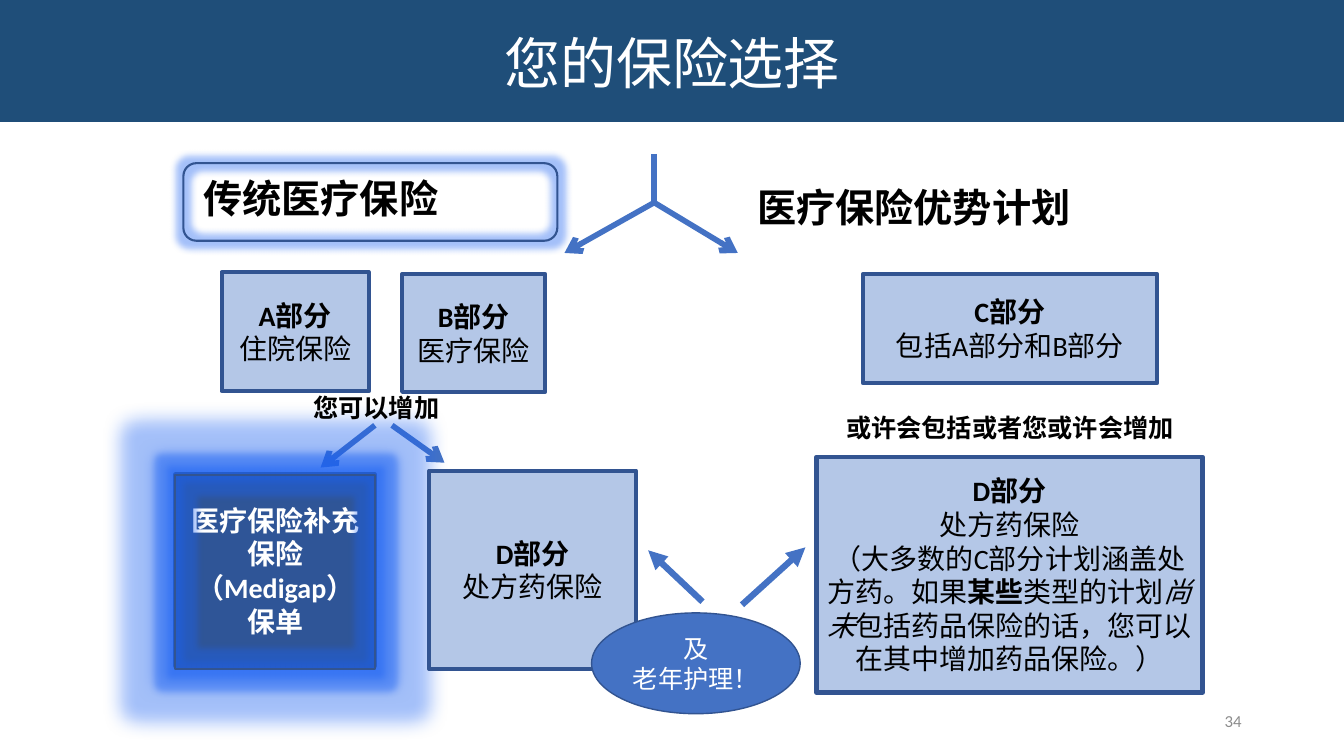
"""Build a slide comparing the two ways to take health insurance."""
from dataclasses import dataclass
from typing import Optional, Union

from lxml import etree
from pptx import Presentation
from pptx import util as u
from pptx.dml import color
from pptx.enum import lang, shapes, text
from pptx.oxml import ns

LEFT, CENTER, RIGHT = text.PP_ALIGN.LEFT, text.PP_ALIGN.CENTER, text.PP_ALIGN.RIGHT
TOP, MIDDLE = text.MSO_ANCHOR.TOP, text.MSO_ANCHOR.MIDDLE
KIND = shapes.MSO_SHAPE


@dataclass(frozen=True)
class Theme:
    banner: str = "1F4E79"
    accent: str = "4472C4"
    edge: str = "325491"
    pale: str = "B4C7E7"
    deep: str = "2F5597"
    glow: str = "1C62F2"
    black: str = "000000"
    white: str = "FFFFFF"
    grey: str = "8C8C8C"
    heading: str = "Arial"
    body: str = "Calibri"
    title_size: float = 40
    plan_size: float = 28
    part_size: float = 20
    note_size: float = 18
    number_size: float = 12


THEME = Theme()


@dataclass(frozen=True)
class Span:
    words: str
    bold: bool = False
    italic: bool = False


@dataclass(frozen=True)
class Copy:
    paragraphs: tuple[tuple[Span, ...], ...]
    size: float = THEME.part_size
    font: str = THEME.body
    ink: str = THEME.black
    align: text.PP_ALIGN = CENTER
    anchor: text.MSO_ANCHOR = MIDDLE
    wrap: bool = True
    inset_left: float = 7.2
    inset_top: float = 3.6


@dataclass(frozen=True)
class Box:
    left: float
    top: float
    width: float
    height: float
    copy: Optional[Copy] = None
    kind: Optional[shapes.MSO_SHAPE] = None
    fill: Optional[str] = None
    border: float = 0
    glow: float = 0


@dataclass(frozen=True)
class Arrow:
    start: tuple[float, float]
    end: tuple[float, float]
    head: str = ""
    weight: float = 4


def heading(words: str, size: float, align: text.PP_ALIGN = LEFT, **options) -> Copy:
    """Return bold heading text."""
    return Copy(((Span(words, bold=True),),), size, THEME.heading,
                align=align, anchor=TOP, **options)


def part(left: float, top: float, width: float, height: float, letter: str,
         cover: str, *details: Span) -> Box:
    """Return a pale box for one part of the insurance."""
    paragraphs = ((Span(f"{letter}部分", bold=True),), (Span(cover),))
    if details:
        paragraphs += (details,)
    return Box(left, top, width, height, Copy(paragraphs), KIND.RECTANGLE, THEME.pale, 3)


FORK = (467.3, 144.7)
MEDIGAP = Copy(((Span("医疗保险补充保险（Medigap）保单", bold=True),),), ink=THEME.white)
ELDER_CARE = Copy(((Span("及"),), (Span("老年护理！"),)), THEME.note_size, ink=THEME.white)
TITLE = Copy(((Span("您的保险选择"),),), THEME.title_size, THEME.heading, THEME.white,
             anchor=TOP, inset_top=20.5)
NUMBER = Copy(((Span("34"),),), THEME.number_size, ink=THEME.grey, align=RIGHT)

ITEMS: tuple[Union[Box, Arrow], ...] = (
    Box(678, 500.5, 216, 28.8, NUMBER),
    Box(0, 0, 960, 87.1, TITLE, KIND.RECTANGLE, THEME.banner),
    Arrow((FORK[0], 110), FORK),
    Arrow(FORK, (403.2, 180.7), "arrow"),
    Arrow(FORK, (527, 180.7), "arrow"),
    Box(138.2, 121, 252.7, 41, heading("传统医疗保险", THEME.plan_size)),
    Box(527, 127.4, 363, 41,
        heading("医疗保险优势计划", THEME.plan_size, inset_left=13.9)),
    part(158.4, 194.4, 105, 85, "A", "住院保险"),
    part(287.3, 195.8, 102.2, 84.2, "B", "医疗保险"),
    Arrow((267.8, 303.8), (229, 334), "arrow"),
    Arrow((280, 303.8), (317.5, 330.5), "arrow"),
    Box(125.3, 339, 142.6, 137, MEDIGAP, KIND.RECTANGLE, THEME.deep, 3, 26),
    part(306.7, 336.2, 147.6, 141.8, "D", "处方药保险"),
    Box(216.7, 276.5, 105, 28.8, heading("您可以增加", THEME.note_size, wrap=False)),
    Box(422.6, 437.8, 149, 72, ELDER_CARE, KIND.OVAL, THEME.accent, 1),
    part(616.3, 195.8, 210.2, 77.8, "C", "包括A部分和B部分"),
    Box(589.7, 290.9, 263.5, 28.8,
        heading("或许会包括或者您或许会增加", THEME.note_size, CENTER)),
    part(583.2, 326.2, 275.8, 168.5, "D", "处方药保险",
         Span("（大多数的C部分计划涵盖处方药。如果"), Span("某些", bold=True),
         Span("类型的计划"), Span("尚未", italic=True),
         Span("包括药品保险的话，您可以在其中增加药品保险。）")),
    Arrow((530, 432), (575.3, 391), "triangle", 4.5),
    Arrow((501.8, 429.8), (463, 393.1), "triangle", 4.5),
    Box(131, 116.6, 267.1, 55.4, None, KIND.ROUNDED_RECTANGLE, None, 1.5, 10),
    Box(125.3, 339, 142.6, 139, None, KIND.RECTANGLE, None, 1.5, 10),
)


def apply(target, values: dict) -> None:
    """Set each named format value on the target."""
    for name, value in values.items():
        setattr(target, name, value)


def rgb(code: str) -> color.RGBColor:
    """Return the colour for a hex code."""
    return color.RGBColor.from_string(code)


def write(shape, copy: Copy) -> None:
    """Fill a shape with formatted text."""
    frame = shape.text_frame
    apply(frame, {"word_wrap": copy.wrap, "vertical_anchor": copy.anchor,
                  "margin_left": u.Pt(copy.inset_left), "margin_top": u.Pt(copy.inset_top),
                  "margin_right": u.Pt(7.2), "margin_bottom": u.Pt(3.6)})
    for index, spans in enumerate(copy.paragraphs):
        paragraph = frame.add_paragraph() if index else frame.paragraphs[0]
        paragraph.alignment = copy.align
        for span in spans:
            run = paragraph.add_run()
            run.text = span.words
            apply(run.font, {"name": copy.font, "size": u.Pt(copy.size), "bold": span.bold,
                             "italic": span.italic,
                             "language_id": lang.MSO_LANGUAGE_ID.SIMPLIFIED_CHINESE})
            run.font.fill.solid()
            run.font.fill.fore_color.rgb = rgb(copy.ink)


def add_glow(shape, radius: float) -> None:
    """Surround a shape with a soft translucent glow."""
    effects = shape.element.spPr.find(ns.qn("a:effectLst"))
    glow = etree.SubElement(effects, ns.qn("a:glow"), rad=str(int(u.Pt(radius))))
    tint = etree.SubElement(glow, ns.qn("a:srgbClr"), val=THEME.glow)
    etree.SubElement(tint, ns.qn("a:alpha"), val="40000")


def draw_box(page, box: Box) -> None:
    """Draw a text box or a preset shape."""
    place = [u.Pt(length) for length in (box.left, box.top, box.width, box.height)]
    if box.kind is None:
        shape = page.shapes.add_textbox(*place)
    else:
        shape = page.shapes.add_shape(box.kind, *place)
        shape.shadow.inherit = False
        if box.fill:
            shape.fill.solid()
            shape.fill.fore_color.rgb = rgb(box.fill)
        else:
            shape.fill.background()
        if box.border:
            shape.line.color.rgb = rgb(THEME.edge)
            shape.line.width = u.Pt(box.border)
        else:
            shape.line.fill.background()
        if box.glow:
            add_glow(shape, box.glow)
    if box.copy:
        write(shape, box.copy)


def draw_arrow(page, arrow: Arrow) -> None:
    """Draw a straight line with an optional head at its end."""
    ends = [u.Pt(length) for length in (*arrow.start, *arrow.end)]
    line = page.shapes.add_connector(shapes.MSO_CONNECTOR.STRAIGHT, *ends)
    line.line.color.rgb = rgb(THEME.accent)
    line.line.width = u.Pt(arrow.weight)
    if arrow.head:
        etree.SubElement(line.line._get_or_add_ln(), ns.qn("a:tailEnd"), type=arrow.head)
    etree.SubElement(line.element.spPr, ns.qn("a:effectLst"))


def main() -> None:
    """Build and save the deck."""
    deck = Presentation()
    apply(deck, {"slide_width": u.Pt(960), "slide_height": u.Pt(540)})
    page = deck.slides.add_slide(deck.slide_layouts[6])
    for item in ITEMS:
        (draw_box if isinstance(item, Box) else draw_arrow)(page, item)
    deck.save("out.pptx")


if __name__ == "__main__":
    main()
